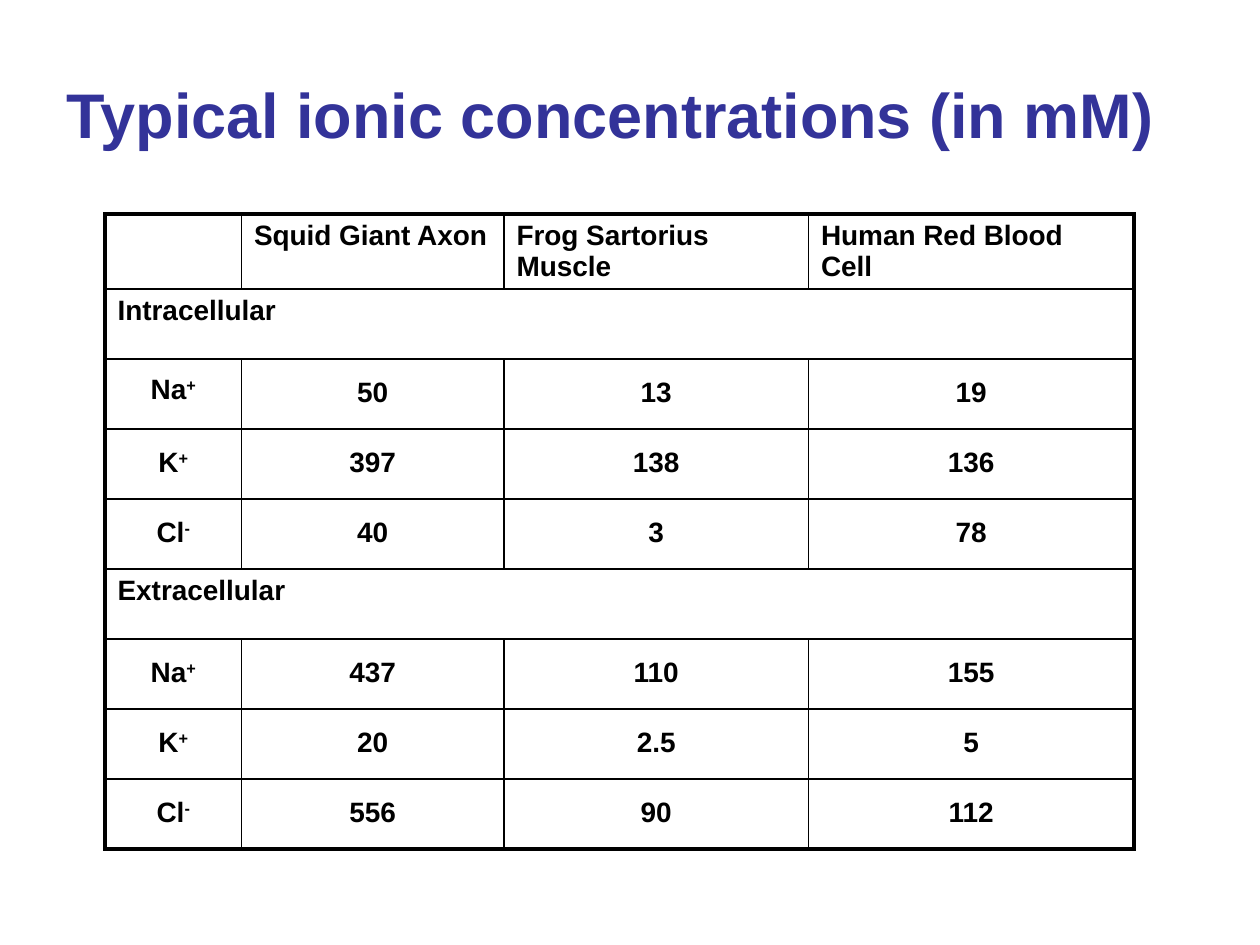
from dataclasses import dataclass

import pptx
import pptx.dml.color
import pptx.enum.text
import pptx.oxml
import pptx.oxml.ns
import pptx.presentation
import pptx.slide
import pptx.table
import pptx.util

Pt = pptx.util.Pt
RGBColor = pptx.dml.color.RGBColor
ALIGN = pptx.enum.text.PP_ALIGN
ANCHOR = pptx.enum.text.MSO_ANCHOR

BLACK = RGBColor(0x00, 0x00, 0x00)
WHITE = RGBColor(0xFF, 0xFF, 0xFF)
INDIGO = RGBColor(0x33, 0x33, 0x99)
FONT = "Arial"
COLUMN_WIDTHS = (78, 150, 174, 186)
ROW_HEIGHT = 40
THIN, THICK = 1, 2.25
HEADERS = ("Squid Giant Axon", "Frog Sartorius Muscle", "Human Red Blood Cell")


@dataclass(frozen=True)
class Ion:
    symbol: str
    charge: str
    values: tuple[str, str, str]
    label_spacing: float = 1.4


@dataclass(frozen=True)
class Compartment:
    name: str
    ions: tuple[Ion, ...]


COMPARTMENTS = (
    Compartment("Intracellular", (
        Ion("Na", "+", ("50", "13", "19"), 1.3),
        Ion("K", "+", ("397", "138", "136")),
        Ion("Cl", "-", ("40", "3", "78")),
    )),
    Compartment("Extracellular", (
        Ion("Na", "+", ("437", "110", "155")),
        Ion("K", "+", ("20", "2.5", "5")),
        Ion("Cl", "-", ("556", "90", "112")),
    )),
)


def add_run(paragraph, text: str, size: float, color: RGBColor,
            superscript: bool = False) -> None:
    run = paragraph.add_run()
    run.text = text
    run.font.name = FONT
    run.font.size = Pt(size)
    run.font.bold = True
    run.font.color.rgb = color
    if superscript:
        run._r.get_or_add_rPr().set("baseline", "30000")


def write_cell(cell: pptx.table._Cell, text: str, charge: str = "",
               alignment: ALIGN = ALIGN.LEFT, spacing: float = 1.0) -> None:
    paragraph = cell.text_frame.paragraphs[0]
    paragraph.alignment = alignment
    paragraph.line_spacing = spacing
    paragraph.space_before = Pt(3.2)
    add_run(paragraph, text, 16, BLACK)
    if charge:
        add_run(paragraph, charge, 16, BLACK, superscript=True)


def style_cell(cell: pptx.table._Cell, left: float, right: float,
               top: float, bottom: float) -> None:
    properties = cell._tc.get_or_add_tcPr()
    for side, width in zip("LRTB", (left, right, top, bottom)):
        properties.append(pptx.oxml.parse_xml(
            f'<a:ln{side} {pptx.oxml.ns.nsdecls("a")} w="{Pt(width)}">'
            f'<a:solidFill><a:srgbClr val="{BLACK}"/></a:solidFill></a:ln{side}>'
        ))
    cell.fill.solid()
    cell.fill.fore_color.rgb = WHITE


def add_title(slide: pptx.slide.Slide) -> None:
    title = slide.shapes.title
    title.left, title.top = Pt(31), Pt(20)
    title.width, title.height = Pt(663), Pt(90)
    title.text_frame.vertical_anchor = ANCHOR.MIDDLE
    title.text_frame.auto_size = pptx.enum.text.MSO_AUTO_SIZE.NONE
    paragraph = title.text_frame.paragraphs[0]
    paragraph.alignment = ALIGN.LEFT
    add_run(paragraph, "Typical ionic concentrations (in mM)", 36, INDIGO)


def add_concentration_table(slide: pptx.slide.Slide) -> None:
    row_count = 1 + sum(1 + len(compartment.ions) for compartment in COMPARTMENTS)
    column_count = len(COLUMN_WIDTHS)
    table = slide.shapes.add_table(
        row_count, column_count, Pt(60), Pt(122.4),
        Pt(sum(COLUMN_WIDTHS)), Pt(row_count * ROW_HEIGHT),
    ).table
    table.first_row = False
    table.horz_banding = False
    for column, width in zip(table.columns, COLUMN_WIDTHS):
        column.width = Pt(width)
    for row_index, row in enumerate(table.rows):
        row.height = Pt(ROW_HEIGHT)
        for column_index, cell in enumerate(row.cells):
            style_cell(
                cell,
                left=THICK if column_index == 0 else THIN,
                right=THICK if column_index == column_count - 1 else THIN,
                top=THICK if row_index == 0 else THIN,
                bottom=THICK if row_index == row_count - 1 else THIN,
            )

    for column_index, header in enumerate(HEADERS, start=1):
        write_cell(table.cell(0, column_index), header)
    row_index = 1
    for compartment in COMPARTMENTS:
        heading = table.cell(row_index, 0)
        heading.merge(table.cell(row_index, column_count - 1))
        style_cell_right = heading._tc.get_or_add_tcPr().find(pptx.oxml.ns.qn("a:lnR"))
        style_cell_right.set("w", str(Pt(THICK)))
        write_cell(heading, compartment.name)
        for row_index, ion in enumerate(compartment.ions, start=row_index + 1):
            write_cell(table.cell(row_index, 0), ion.symbol, ion.charge,
                       ALIGN.CENTER, ion.label_spacing)
            for column_index, value in enumerate(ion.values, start=1):
                write_cell(table.cell(row_index, column_index), value,
                           alignment=ALIGN.CENTER, spacing=1.4)
        row_index += 1


def main() -> None:
    presentation = pptx.Presentation()
    presentation.slide_width = Pt(720)
    presentation.slide_height = Pt(540)
    slide = presentation.slides.add_slide(presentation.slide_layouts[5])
    add_title(slide)
    add_concentration_table(slide)
    presentation.save("out.pptx")


if __name__ == "__main__":
    main()
